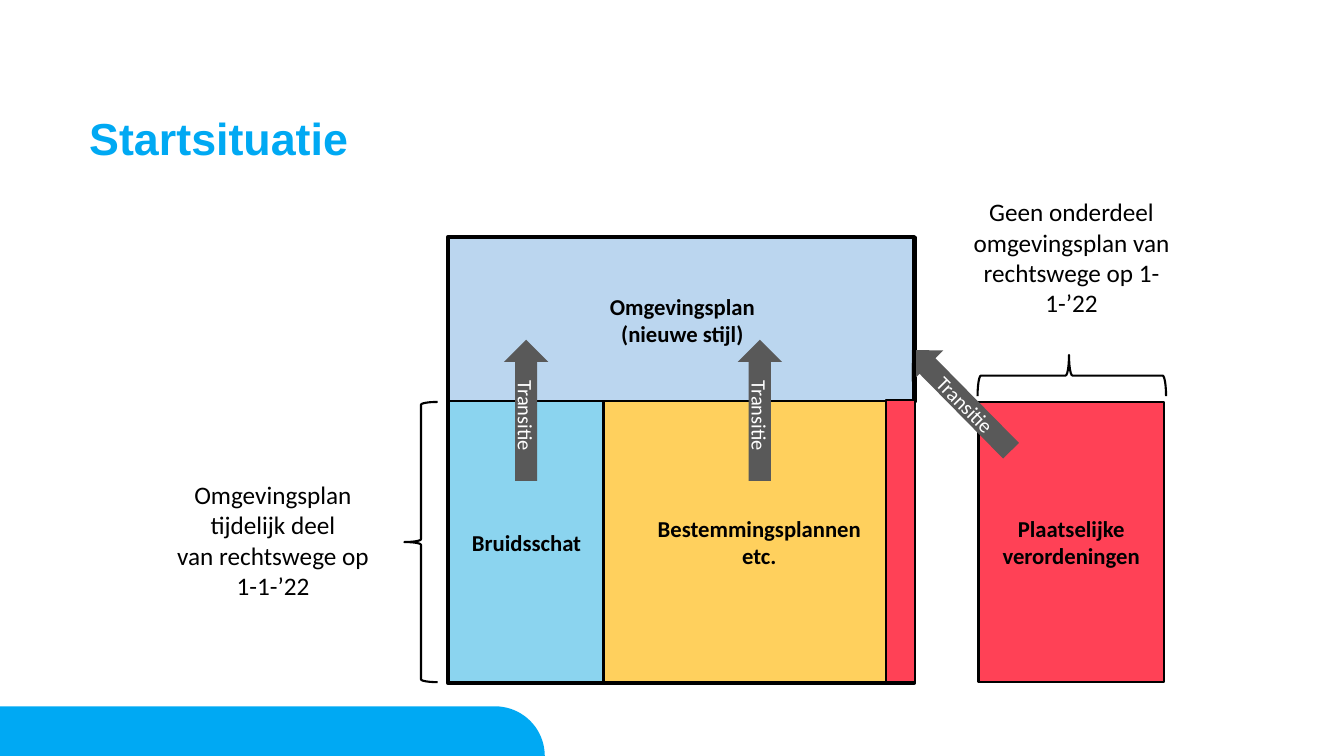
from math import cos, pi, sin

from pptx import Presentation
from pptx.dml.color import RGBColor
from pptx.enum.shapes import MSO_SHAPE as SHAPE
from pptx.enum.text import MSO_ANCHOR as ANCHOR, PP_ALIGN as ALIGN
from pptx.util import Cm, Pt

COLORS = {
    "brand": "00A9F3", "new_plan": "BBD6EF", "dowry": "8BD4EF",
    "zoning": "FFD05D", "bylaws": "FF4156", "arrow": "595959",
    "black": "000000", "white": "FFFFFF",
}


def add_part(kind, box, fill=None, line_width=1.5):
    part = slide.shapes.add_shape(kind, *[Cm(length) for length in box])
    part.shadow.inherit = False
    if fill:
        part.fill.solid()
        part.fill.fore_color.rgb = RGBColor.from_string(COLORS[fill])
    else:
        part.fill.background()
    if line_width:
        part.line.color.rgb = RGBColor.from_string(COLORS["black"])
        part.line.width = Pt(line_width)
    else:
        part.line.fill.background()
    return part


def write(part, text, size, color="black", bold=False, font="Calibri", align=ALIGN.CENTER):
    frame = part.text_frame
    frame.word_wrap = True
    frame.text = text
    for paragraph in frame.paragraphs:
        paragraph.alignment = align
        for run in paragraph.runs:
            run.font.name = font
            run.font.size = Pt(size)
            run.font.bold = bold
            run.font.color.rgb = RGBColor.from_string(COLORS[color])


prs = Presentation()
prs.slide_width, prs.slide_height = Cm(33.87), Cm(19.05)
slide = prs.slides.add_slide(prs.slide_layouts[6])

radius, footer_right, footer_bottom = 1.25, 13.73, 19.05
curve = [
    (Cm(footer_right - radius + radius * sin(step * pi / 40)),
     Cm(footer_bottom - radius * cos(step * pi / 40)))
    for step in range(21)
]
outline = slide.shapes.build_freeform(0, Cm(footer_bottom))
outline.add_line_segments([(0, Cm(footer_bottom - radius))] + curve)
footer = outline.convert_to_shape()
footer.shadow.inherit = False
footer.fill.solid()
footer.fill.fore_color.rgb = RGBColor.from_string(COLORS["brand"])
footer.line.fill.background()

title = slide.shapes.add_textbox(Cm(2), Cm(2.82), Cm(27.86), Cm(2))
write(title, "Startsituatie", 32, "brand", True, "Arial", ALIGN.LEFT)
title.text_frame.paragraphs[0].line_spacing = 0.9

for text, fill, box in [
    ("Omgevingsplan\n(nieuwe stijl)", "new_plan", (11.3, 5.97, 11.79, 4.17)),
    ("Bruidsschat", "dowry", (11.3, 10.11, 3.94, 7.11)),
    ("Bestemmingsplannen\vetc.", "zoning", (15.21, 10.11, 7.85, 7.11)),
    ("Plaatselijke verordeningen", "bylaws", (24.66, 10.13, 4.67, 7.06)),
]:
    block = add_part(SHAPE.RECTANGLE, box, fill)
    block.text_frame.vertical_anchor = ANCHOR.MIDDLE
    write(block, text, 16.2, bold=True)

add_part(SHAPE.LEFT_BRACE, (10.19, 10.13, 0.84, 7.06))

for text, box in [
    ("Geen onderdeel omgevingsplan van rechtswege op 1-1-’22", (23.93, 4.83, 6.15, 3.94)),
    ("Omgevingsplan\vtijdelijk deel\vvan rechtswege op\n1-1-’22", (3.78, 11.96, 6.2, 3.33)),
]:
    note = slide.shapes.add_textbox(*[Cm(length) for length in box])
    write(note, text, 18)

for left, top, angle in [(12.7, 8.56, 0), (18.59, 8.56, 0), (23.67, 8.31, 315.4)]:
    transition = add_part(SHAPE.UP_ARROW, (left, top, 1.12, 3.56), "arrow", 0)
    transition.rotation = angle
    frame = transition.text_frame
    frame.margin_left = frame.margin_right = frame.margin_top = frame.margin_bottom = 0
    frame.vertical_anchor = ANCHOR.MIDDLE
    write(transition, "Transitie", 14.6, "white")
    frame._txBody.bodyPr.set("vert", "vert")

add_part(SHAPE.RECTANGLE, (11.3, 5.97, 11.73, 11.25), line_width=3)

bylaws_brace = add_part(SHAPE.LEFT_BRACE, (26.49, 7.09, 1.04, 4.75))
bylaws_brace.rotation = 90
bylaws_brace.adjustments[1] = 0.515

add_part(SHAPE.RECTANGLE, (22.33, 10.08, 0.74, 7.11), "bylaws")

prs.save("out.pptx")
